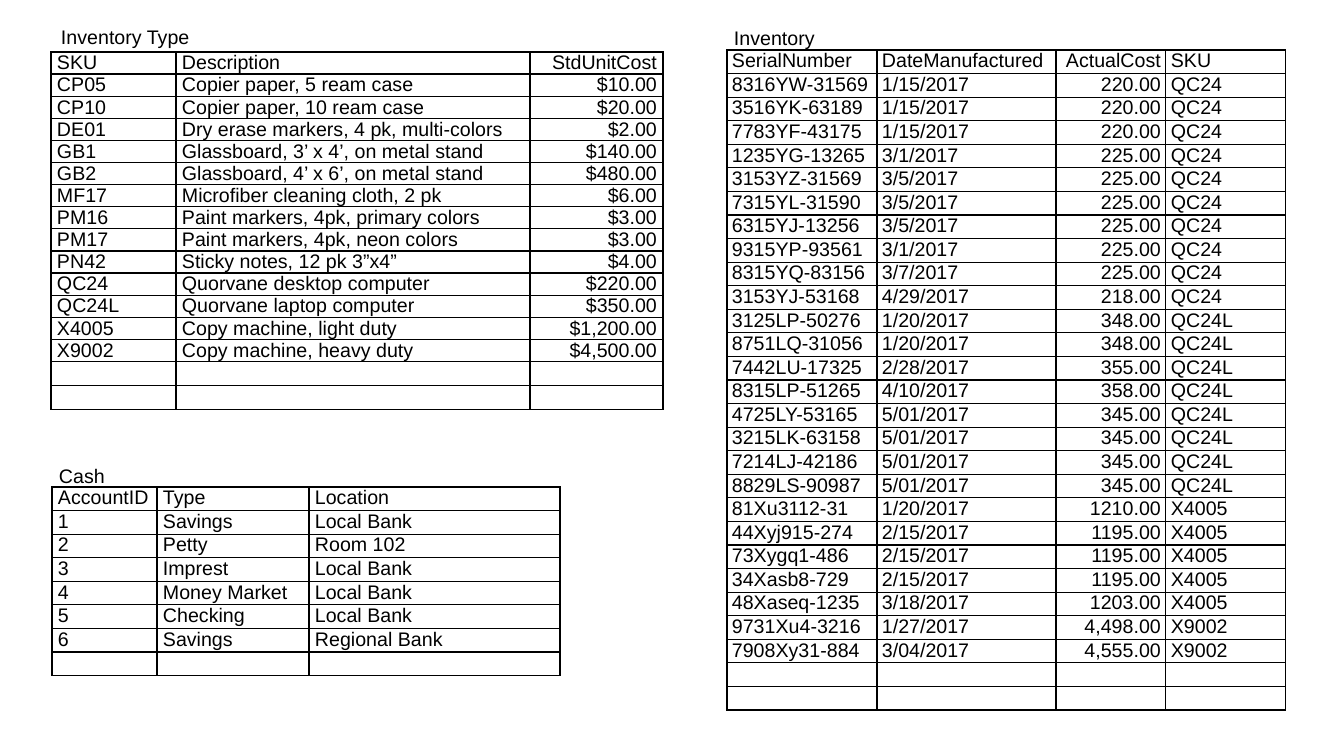
import pptx
import pptx.dml.color
import pptx.enum.text
import pptx.oxml.ns
import pptx.util
from lxml import etree

PX = 914400 / 100.8
FONT = "Arial"
FONT_SIZE = 14
BLACK = "000000"

INVENTORY_TYPE = [
    ("SKU", "Description", "StdUnitCost"),
    ("CP05", "Copier paper, 5 ream case", "$10.00"),
    ("CP10", "Copier paper, 10 ream case", "$20.00"),
    ("DE01", "Dry erase markers, 4 pk, multi-colors", "$2.00"),
    ("GB1", "Glassboard, 3’ x 4’, on metal stand", "$140.00"),
    ("GB2", "Glassboard, 4’ x 6’, on metal stand", "$480.00"),
    ("MF17", "Microfiber cleaning cloth, 2 pk", "$6.00"),
    ("PM16", "Paint markers, 4pk, primary colors", "$3.00"),
    ("PM17", "Paint markers, 4pk, neon colors", "$3.00"),
    ("PN42", "Sticky notes, 12 pk 3”x4”", "$4.00"),
    ("QC24", "Quorvane desktop computer", "$220.00"),
    ("QC24L", "Quorvane laptop computer", "$350.00"),
    ("X4005", "Copy machine, light duty", "$1,200.00"),
    ("X9002", "Copy machine, heavy duty", "$4,500.00"),
]

INVENTORY = [
    ("SerialNumber", "DateManufactured", "ActualCost", "SKU"),
    ("8316YW-31569", "1/15/2017", "220.00", "QC24"),
    ("3516YK-63189", "1/15/2017", "220.00", "QC24"),
    ("7783YF-43175", "1/15/2017", "220.00", "QC24"),
    ("1235YG-13265", "3/1/2017", "225.00", "QC24"),
    ("3153YZ-31569", "3/5/2017", "225.00", "QC24"),
    ("7315YL-31590", "3/5/2017", "225.00", "QC24"),
    ("6315YJ-13256", "3/5/2017", "225.00", "QC24"),
    ("9315YP-93561", "3/1/2017", "225.00", "QC24"),
    ("8315YQ-83156", "3/7/2017", "225.00", "QC24"),
    ("3153YJ-53168", "4/29/2017", "218.00", "QC24"),
    ("3125LP-50276", "1/20/2017", "348.00", "QC24L"),
    ("8751LQ-31056", "1/20/2017", "348.00", "QC24L"),
    ("7442LU-17325", "2/28/2017", "355.00", "QC24L"),
    ("8315LP-51265", "4/10/2017", "358.00", "QC24L"),
    ("4725LY-53165", "5/01/2017", "345.00", "QC24L"),
    ("3215LK-63158", "5/01/2017", "345.00", "QC24L"),
    ("7214LJ-42186", "5/01/2017", "345.00", "QC24L"),
    ("8829LS-90987", "5/01/2017", "345.00", "QC24L"),
    ("81Xu3112-31", "1/20/2017", "1210.00", "X4005"),
    ("44Xyj915-274", "2/15/2017", "1195.00", "X4005"),
    ("73Xygq1-486", "2/15/2017", "1195.00", "X4005"),
    ("34Xasb8-729", "2/15/2017", "1195.00", "X4005"),
    ("48Xaseq-1235", "3/18/2017", "1203.00", "X4005"),
    ("9731Xu4-3216", "1/27/2017", "4,498.00", "X9002"),
    ("7908Xy31-884", "3/04/2017", "4,555.00", "X9002"),
]

CASH = [
    ("AccountID", "Type", "Location"),
    ("1", "Savings", "Local Bank"),
    ("2", "Petty", "Room 102"),
    ("3", "Imprest", "Local Bank"),
    ("4", "Money Market", "Local Bank"),
    ("5", "Checking", "Local Bank"),
    ("6", "Savings", "Regional Bank"),
]


def px(length):
    return pptx.util.Emu(round(length * PX))


def color(hex_string):
    return pptx.dml.color.RGBColor.from_string(hex_string)


def add_text(paragraph, text):
    run = paragraph.add_run()
    run.text = text
    run.font.name = FONT
    run.font.size = pptx.util.Pt(FONT_SIZE)
    run.font.color.rgb = color(BLACK)


def set_empty_size(paragraph):
    """Keep a cell without text as low as the filled ones."""
    tag = pptx.oxml.ns.qn("a:endParaRPr")
    etree.SubElement(paragraph._p, tag, sz=str(FONT_SIZE * 100))


def add_borders(cell):
    properties = cell._tc.get_or_add_tcPr()
    for side in ("lnL", "lnR", "lnT", "lnB"):
        line = etree.SubElement(properties, pptx.oxml.ns.qn(f"a:{side}"),
                                w=str(int(pptx.util.Pt(1))))
        fill = etree.SubElement(line, pptx.oxml.ns.qn("a:solidFill"))
        etree.SubElement(fill, pptx.oxml.ns.qn("a:srgbClr"), val=BLACK)


def add_caption(slide, text, box):
    shape = slide.shapes.add_textbox(*map(px, box))
    frame = shape.text_frame
    frame.word_wrap = True
    frame.auto_size = pptx.enum.text.MSO_AUTO_SIZE.SHAPE_TO_FIT_TEXT
    frame.vertical_anchor = pptx.enum.text.MSO_ANCHOR.MIDDLE
    frame.margin_left = frame.margin_right = px(7)
    frame.margin_top = frame.margin_bottom = px(4)
    add_text(frame.paragraphs[0], text)


def format_cell(cell, text, margin, right_aligned):
    cell.margin_left = cell.margin_right = px(margin)
    cell.margin_top = cell.margin_bottom = 0
    add_borders(cell)
    cell.fill.background()
    paragraph = cell.text_frame.paragraphs[0]
    if right_aligned:
        paragraph.alignment = pptx.enum.text.PP_ALIGN.RIGHT
    if text:
        add_text(paragraph, text)
    else:
        set_empty_size(paragraph)


def add_ledger(slide, entries, spare_rows, box, widths, margin, cost_column=None):
    """Fill the box with equal rows, the spare ones empty and last."""
    rows = entries + [("",) * len(widths)] * spare_rows
    left, top, height = box
    table = slide.shapes.add_table(len(rows), len(widths), px(left), px(top),
                                   px(sum(widths)), px(height)).table
    table.first_row = table.horz_banding = False
    for column, width in zip(table.columns, widths):
        column.width = px(width)
    for row_index, texts in enumerate(rows):
        table.rows[row_index].height = px(height / len(rows))
        for column_index, text in enumerate(texts):
            format_cell(table.cell(row_index, column_index), text, margin,
                        column_index == cost_column)


def main():
    presentation = pptx.Presentation()
    presentation.slide_width = px(1344)
    presentation.slide_height = px(756)
    slide = presentation.slides.add_slide(presentation.slide_layouts[6])

    add_ledger(slide, INVENTORY_TYPE, 2, (51, 52, 354), (125, 354, 133), 6, 2)
    add_caption(slide, "Inventory Type", (54, 21, 353, 31))
    add_ledger(slide, INVENTORY, 2, (727, 50, 660), (150, 179, 110, 120), 5, 2)
    add_caption(slide, "Inventory", (727, 22, 392, 31))
    add_ledger(slide, CASH, 1, (52, 487, 188), (105, 152, 251), 6)
    add_caption(slide, "Cash", (52, 460, 282, 31))

    presentation.save("out.pptx")


if __name__ == "__main__":
    main()
